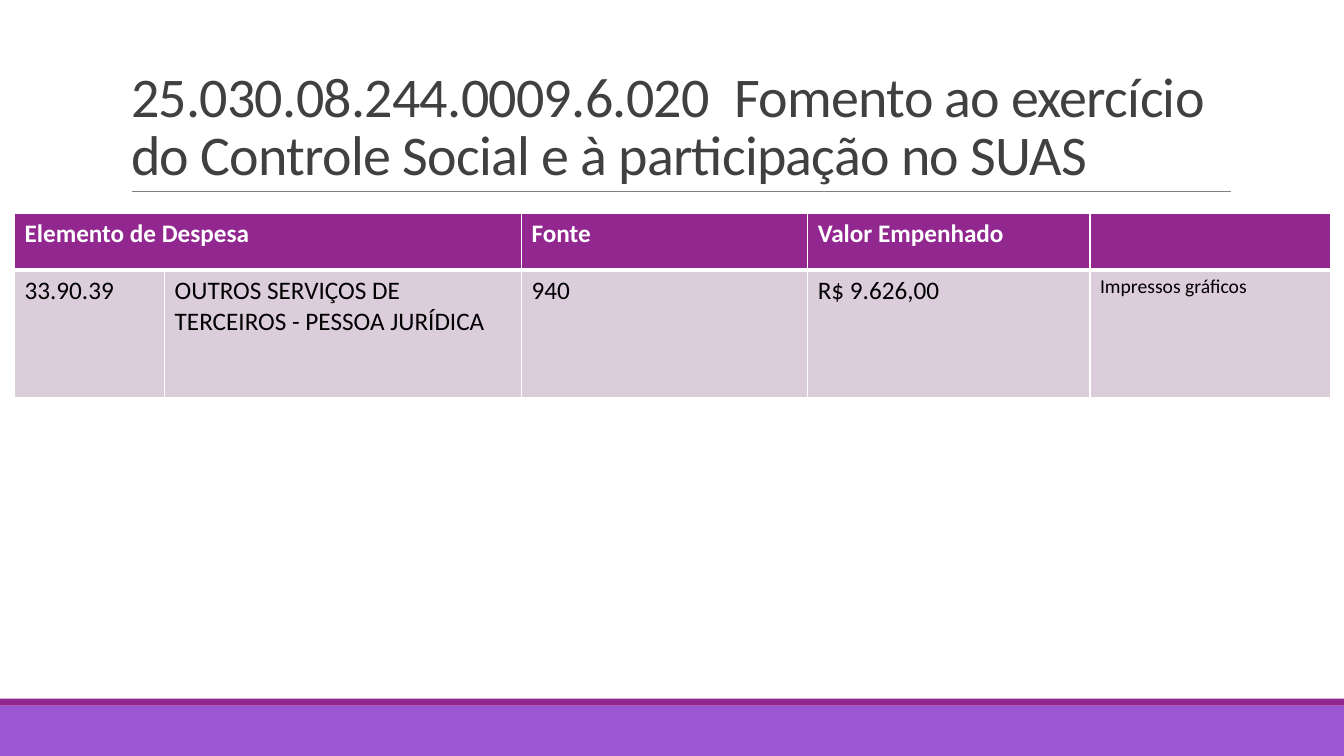
from dataclasses import dataclass

from lxml.etree import SubElement
from pptx import Presentation
from pptx.dml.color import RGBColor
from pptx.enum.shapes import MSO_CONNECTOR, MSO_SHAPE
from pptx.enum.text import MSO_ANCHOR, MSO_AUTO_SIZE, PP_ALIGN
from pptx.oxml.ns import qn
from pptx.slide import Slide
from pptx.table import _Cell
from pptx.util import Pt

FONT = "Calibri"
WHITE = "FFFFFF"
PLUM = "92278F"
WIDE, HIGH = 960, 540


@dataclass
class Bar:
    top: float
    height: float
    color: str


@dataclass
class Part:
    text: str
    space: float


@dataclass
class Row:
    height: float
    fill: str
    ink: str
    bold: bool
    base: float
    texts: list[str]
    sizes: list[int]


BARS = [Bar(504, 36, "9B57D3"), Bar(499, 5, PLUM)]
TITLE = [
    Part("25.030.08.244.0009.6.020", -0.5),
    Part(" ", 8.5),
    Part("Fomento ao exercício do Controle Social e à participação no SUAS", -0.5),
]
WIDTHS = [107.2, 254.9, 204.5, 201.6, 171.7]
ROWS = [
    Row(40.5, PLUM, WHITE, True, 3,
        ["Elemento de Despesa", "", "Fonte", "Valor Empenhado", ""], [18] * 5),
    Row(90.9, "DCCDDB", "000000", False, 1,
        ["33.90.39", "OUTROS SERVIÇOS DE TERCEIROS - PESSOA JURÍDICA", "940",
         "R$ 9.626,00", "Impressos gráficos"], [18] * 4 + [14]),
]


def tint(code: str) -> RGBColor:
    return RGBColor.from_string(code)


def draw_bar(slide: Slide, bar: Bar) -> None:
    shape = slide.shapes.add_shape(
        MSO_SHAPE.RECTANGLE, Pt(0), Pt(bar.top), Pt(WIDE), Pt(bar.height))
    shape.shadow.inherit = False
    shape.fill.solid()
    shape.fill.fore_color.rgb = tint(bar.color)
    shape.line.fill.background()


def draw_rule(slide: Slide) -> None:
    rule = slide.shapes.add_connector(
        MSO_CONNECTOR.STRAIGHT, Pt(94.5), Pt(136.8), Pt(879), Pt(136.8))
    rule.line.color.rgb = tint("808080")
    rule.line.width = Pt(0.5)
    SubElement(rule._element.spPr, qn("a:effectLst"))


def draw_title(slide: Slide) -> None:
    title = slide.shapes.title
    title.left, title.top = Pt(86.4), Pt(22.5)
    title.width, title.height = Pt(792), Pt(114.3)
    frame = title.text_frame
    frame.word_wrap = True
    frame.auto_size = MSO_AUTO_SIZE.NONE
    frame.vertical_anchor = MSO_ANCHOR.BOTTOM
    para = frame.paragraphs[0]
    para.alignment = PP_ALIGN.LEFT
    para.line_spacing = 0.85
    for part in TITLE:
        run = para.add_run()
        run.text = part.text
        run.font.name = FONT
        run.font.size = Pt(40)
        run.font.color.rgb = tint("404040")
        run.font._element.set("spc", str(round(part.space * 100)))


def edge_cell(cell: _Cell, base: float) -> None:
    props = cell._tc.get_or_add_tcPr()
    for side, width in (("L", 1), ("R", 1), ("T", 1), ("B", base)):
        line = SubElement(props, qn(f"a:ln{side}"), w=str(Pt(width)))
        fill = SubElement(line, qn("a:solidFill"))
        SubElement(fill, qn("a:srgbClr"), val=WHITE)


def fill_cell(cell: _Cell, row: Row, text: str, size: int) -> None:
    edge_cell(cell, row.base)
    cell.fill.solid()
    cell.fill.fore_color.rgb = tint(row.fill)
    if text:
        run = cell.text_frame.paragraphs[0].add_run()
        run.text = text
        run.font.name = FONT
        run.font.size = Pt(size)
        run.font.bold = row.bold
        run.font.color.rgb = tint(row.ink)


def draw_table(slide: Slide) -> None:
    high = sum(row.height for row in ROWS)
    table = slide.shapes.add_table(
        len(ROWS), len(WIDTHS), Pt(10.4), Pt(152.6), Pt(sum(WIDTHS)), Pt(high)).table
    table.horz_banding = False
    for col, width in zip(table.columns, WIDTHS):
        col.width = Pt(width)
    table.cell(0, 0).merge(table.cell(0, 1))
    for line, row in zip(table.rows, ROWS):
        line.height = Pt(row.height)
        for cell, text, size in zip(line.cells, row.texts, row.sizes):
            fill_cell(cell, row, text, size)


def main() -> None:
    deck = Presentation()
    deck.slide_width, deck.slide_height = Pt(WIDE), Pt(HIGH)
    slide = deck.slides.add_slide(deck.slide_layouts[5])
    for bar in BARS:
        draw_bar(slide, bar)
    draw_rule(slide)
    draw_title(slide)
    draw_table(slide)
    deck.save("out.pptx")


if __name__ == "__main__":
    main()
